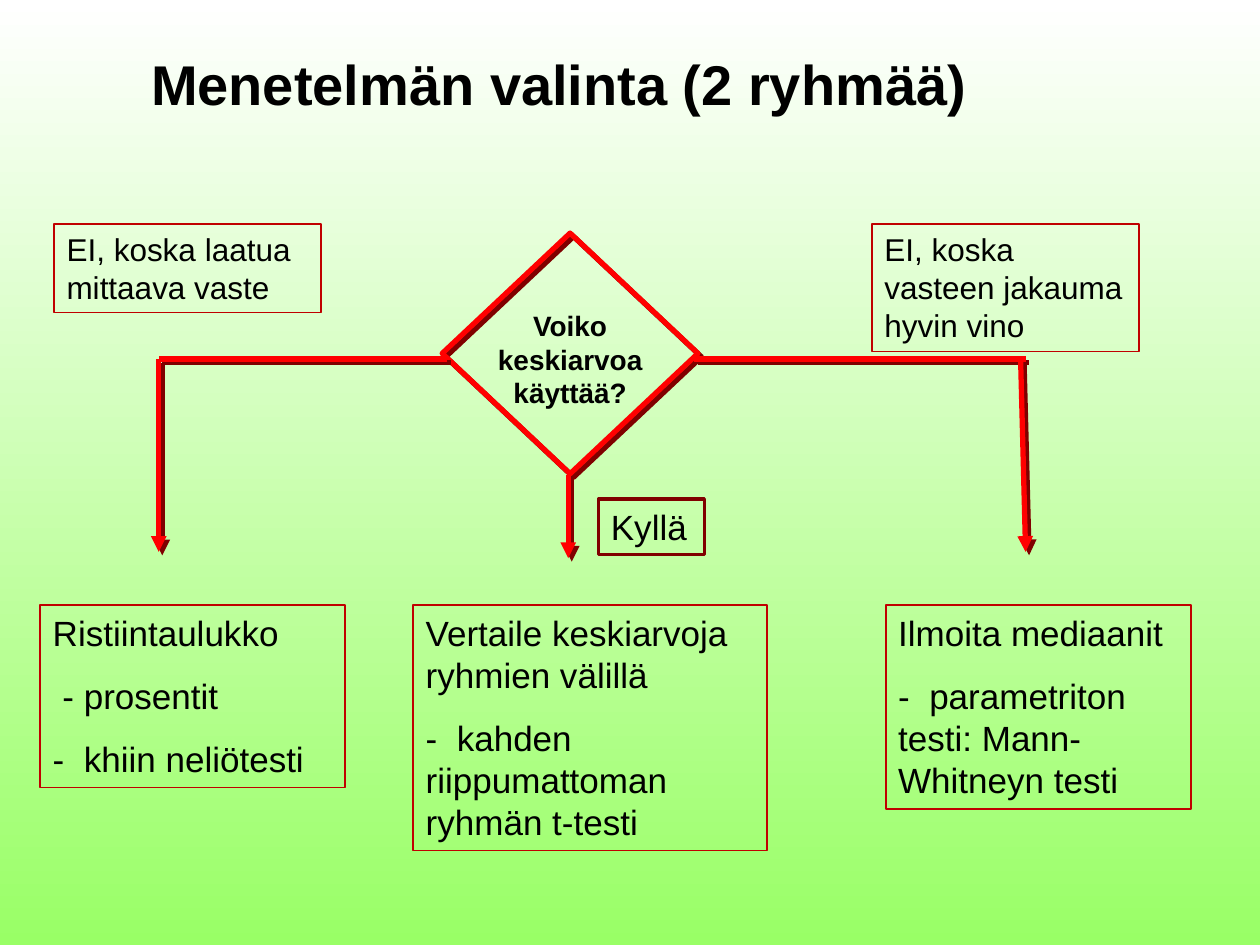
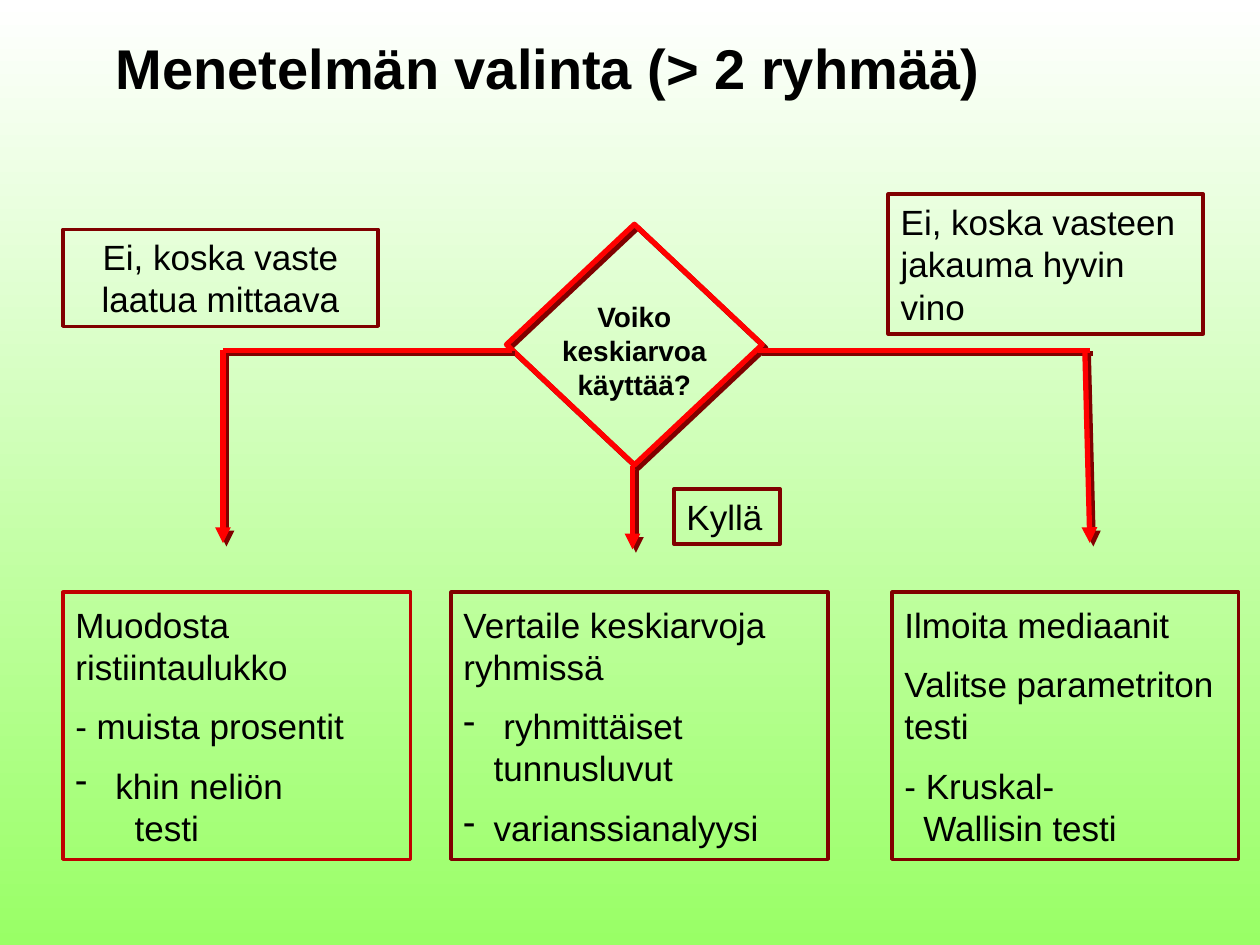
"""Build two decision-flow slides on choosing a statistical method."""
from lxml import etree
from pptx import Presentation
from pptx.dml.color import RGBColor
from pptx.enum.shapes import MSO_CONNECTOR, MSO_SHAPE
from pptx.enum.text import MSO_ANCHOR, MSO_AUTO_SIZE, PP_ALIGN
from pptx.oxml.ns import qn
from pptx.util import Inches, Pt

RECTANGLE, DECISION = MSO_SHAPE.RECTANGLE, MSO_SHAPE.FLOWCHART_DECISION
STRAIGHT = MSO_CONNECTOR.STRAIGHT
TOP, MIDDLE = MSO_ANCHOR.TOP, MSO_ANCHOR.MIDDLE
LEFT, CENTER = PP_ALIGN.LEFT, PP_ALIGN.CENTER
GROW = MSO_AUTO_SIZE.SHAPE_TO_FIT_TEXT

FONT = "Arial"
BLACK, RED, CRIMSON, MAROON = "000000", "FF0000", "C00000", "800000"
BACKGROUND = ("FFFFFF", "99FF66")
QUESTION = "Voiko keskiarvoa käyttää?"
HANG = 0.24

# Paragraphs are plain text or (text, options); positions are left, top, width, height.
SLIDES = [
    {
        "title": ("Menetelmän valinta (2 ryhmää)", 1.1, 0.49),
        "flow": (3.51, 1.85),
        "gap": 12,
        "boxes": [
            {"at": (0.43, 1.78, 2.12, 0.7), "size": 18, "text": ["EI, koska laatua mittaava vaste"]},
            {"at": (6.92, 1.78, 2.12, 1.01), "size": 18, "text": ["EI, koska vasteen jakauma hyvin vino"]},
            {"at": (0.32, 4.8, 2.42, 1.45),
             "text": ["Ristiintaulukko", " - prosentit", "-  khiin neliötesti"]},
            {"at": (3.28, 4.8, 2.81, 1.95),
             "text": ["Vertaile keskiarvoja ryhmien välillä",
                      "-  kahden riippumattoman ryhmän t-testi"]},
            {"at": (7.03, 4.8, 2.42, 1.62),
             "text": ["Ilmoita mediaanit", "-  parametriton testi: Mann-Whitneyn testi"]},
            {"at": (4.75, 3.96, 0.84, 0.44), "line": (MAROON, 2), "anchor": MIDDLE, "text": ["Kyllä"]},
        ],
    },
    {
        "title": ("Menetelmän valinta (> 2 ryhmää)", 0.82, 0.36),
        "flow": (4.02, 1.78),
        "gap": 10,
        "boxes": [
            {"at": (0.5, 1.82, 2.5, 0.77), "line": (MAROON, 2), "anchor": MIDDLE, "align": CENTER,
             "text": ["Ei, koska vaste laatua mittaava"]},
            {"at": (7.05, 1.54, 2.5, 1.11), "line": (MAROON, 2), "anchor": MIDDLE,
             "text": ["Ei, koska vasteen jakauma hyvin vino"]},
            {"at": (0.5, 4.7, 2.76, 2.12), "line": (CRIMSON, 2), "anchor": MIDDLE,
             "text": ["Muodosta ristiintaulukko", "- muista prosentit",
                      (" khin neliön", {"margin": HANG, "hang": HANG, "bullet": "-"}),
                      ("testi", {"margin": 0.47, "gap": 0})]},
            {"at": (3.58, 4.7, 2.99, 2.12), "line": (MAROON, 2), "anchor": MIDDLE,
             "text": ["Vertaile keskiarvoja ryhmissä",
                      (" ryhmittäiset tunnusluvut", {"margin": HANG, "hang": HANG, "bullet": "-"}),
                      ("varianssianalyysi", {"margin": HANG, "hang": HANG, "bullet": "-"})]},
            {"at": (7.08, 4.7, 2.75, 2.12), "line": (MAROON, 2), "anchor": MIDDLE,
             "text": ["Ilmoita mediaanit", "Valitse parametriton testi",
                      ("- Kruskal-\vWallisin testi", {"margin": 0.15, "hang": 0.15})]},
            {"at": (5.35, 3.88, 0.84, 0.44), "line": (MAROON, 2), "anchor": MIDDLE, "text": ["Kyllä"]},
        ],
    },
]

# Offsets from the top left corner of the decision diamond: start, end, arrowhead.
BRANCHES = [
    ((2.0, 1.0), (4.63, 1.0), False),
    ((4.59, 1.0), (4.63, 2.53), True),
    ((1.0, 1.92), (1.0, 2.58), True),
    ((0.04, 1.0), (-2.25, 1.0), False),
    ((-2.25, 1.0), (-2.25, 2.53), True),
]


def color(code):
    return RGBColor.from_string(code)


def inches(*lengths):
    return [Inches(length) for length in lengths]


def set_line(shape, code, width):
    shape.line.color.rgb = color(code)
    shape.line.width = Pt(width)


def add_shadow(shape):
    properties = shape._element.spPr
    effects = properties.find(qn("a:effectLst"))
    if effects is None:
        effects = etree.SubElement(properties, qn("a:effectLst"))
    shadow = etree.SubElement(effects, qn("a:outerShdw"), dist=str(Pt(2.8)), dir="2700000",
                              algn="ctr", rotWithShape="0")
    etree.SubElement(shadow, qn("a:srgbClr"), val=MAROON)


def format_paragraph(paragraph, margin=0, hang=0, bullet=None, gap=0):
    paragraph.space_before = Pt(gap)
    properties = paragraph._p.get_or_add_pPr()
    properties.set("marL", str(Inches(margin)))
    properties.set("indent", str(-Inches(hang)))
    if bullet:
        etree.SubElement(properties, qn("a:buChar"), char=bullet)


def write(shape, lines, size, bold=False, align=LEFT, anchor=TOP, gap=0, spacing=None, grow=True):
    frame = shape.text_frame
    frame.word_wrap = True
    frame.vertical_anchor = anchor
    if grow:
        frame.auto_size = GROW
    for index, line in enumerate(lines):
        text, options = (line, {}) if isinstance(line, str) else line
        paragraph = frame.add_paragraph() if index else frame.paragraphs[0]
        paragraph.text = text
        paragraph.alignment = align
        if spacing:
            paragraph.line_spacing = spacing
        format_paragraph(paragraph, **{"gap": gap, **options})
        for run in paragraph.runs:
            run.font.name = FONT
            run.font.size = Pt(size)
            run.font.bold = bold
            run.font.color.rgb = color(BLACK)


def add_outline(slide, kind, at, code, width):
    shape = slide.shapes.add_shape(kind, *inches(*at))
    shape.fill.background()
    set_line(shape, code, width)
    shape.shadow.inherit = False
    return shape


def add_title(slide, text, left, top):
    title = slide.shapes.add_textbox(*inches(left, top, 8.98, 1.21))
    write(title, [text], 32, bold=True, spacing=0.7, grow=False)


def add_flow(slide, left, top):
    diamond = add_outline(slide, DECISION, (left, top, 2.03, 1.91), RED, 3)
    add_shadow(diamond)
    for (x1, y1), (x2, y2), arrow in BRANCHES:
        branch = slide.shapes.add_connector(
            STRAIGHT, *inches(left + x1, top + y1, left + x2, top + y2))
        set_line(branch, RED, 3)
        if arrow:
            etree.SubElement(branch.line._get_or_add_ln(), qn("a:tailEnd"), type="triangle")
        add_shadow(branch)
    question = slide.shapes.add_textbox(*inches(left + 0.34, top + 0.55, 1.35, 0.9))
    write(question, [QUESTION], 16, bold=True, align=CENTER, anchor=MIDDLE)


def add_box(slide, gap, at, text, size=20, line=(CRIMSON, 1), anchor=TOP, align=LEFT):
    box = add_outline(slide, RECTANGLE, at, *line)
    write(box, text, size, align=align, anchor=anchor, gap=gap)


def set_background(master):
    fill = master.background.fill
    fill.gradient()
    fill.gradient_angle = 270
    for stop, code in zip(fill.gradient_stops, BACKGROUND):
        stop.color.rgb = color(code)


def main():
    presentation = Presentation()
    presentation.slide_width, presentation.slide_height = inches(10, 7.5)
    set_background(presentation.slide_master)
    for content in SLIDES:
        slide = presentation.slides.add_slide(presentation.slide_layouts[6])
        add_title(slide, *content["title"])
        add_flow(slide, *content["flow"])
        for box in content["boxes"]:
            add_box(slide, content["gap"], **box)
    presentation.save("out.pptx")


if __name__ == "__main__":
    main()
